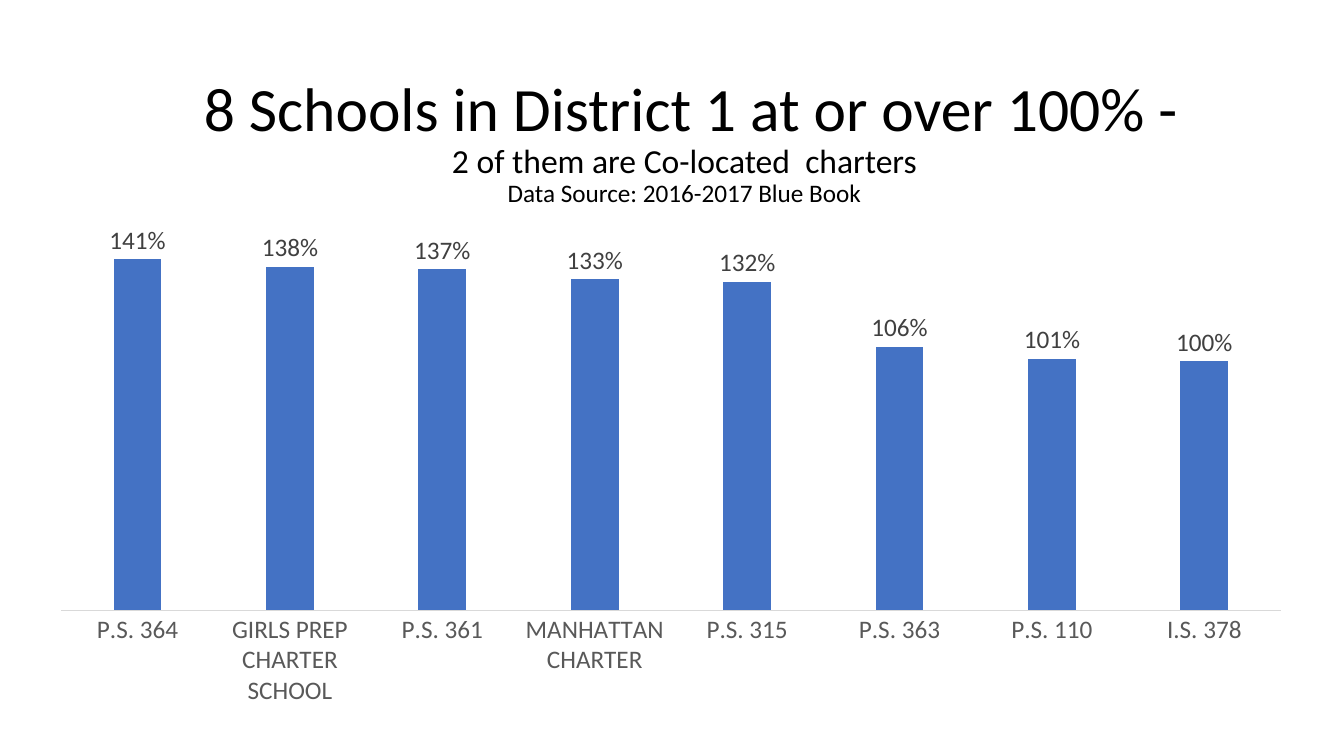
from pptx import Presentation
from pptx.chart.data import CategoryChartData
from pptx.dml.color import RGBColor
from pptx.enum.chart import XL_CHART_TYPE as ChartType, XL_LABEL_POSITION as LabelPos
from pptx.enum.chart import XL_TICK_MARK as Tick
from pptx.enum.text import MSO_ANCHOR as Anchor, MSO_AUTO_SIZE as AutoSize, PP_ALIGN as Align
from pptx.util import Pt

PX = 914400 / 100.8
FONT = "Calibri"
BLACK = RGBColor(0x00, 0x00, 0x00)
BLUE = RGBColor(0x44, 0x72, 0xC4)
LABEL_GRAY = RGBColor(0x40, 0x40, 0x40)
AXIS_GRAY = RGBColor(0x59, 0x59, 0x59)
LINE_GRAY = RGBColor(0xD9, 0xD9, 0xD9)

TITLE_LINES = [
    (" 8 Schools in District 1 at or over 100% -", 44),
    ("2 of them are Co-located  charters", 24),
    ("Data Source: 2016-2017 Blue Book", 18),
]
UTILIZATION = {
    "P.S. 364": 1.41,
    "GIRLS PREP CHARTER SCHOOL": 1.38,
    "P.S. 361": 1.37,
    "MANHATTAN CHARTER": 1.33,
    "P.S. 315": 1.32,
    "P.S. 363": 1.06,
    "P.S. 110": 1.01,
    "I.S. 378": 1,
}


def emu(*lengths):
    """Turn px lengths into EMU."""
    return [round(n * PX) for n in lengths]


def style_font(font, size, color):
    """Set the face, size and colour of a font."""
    font.name = FONT
    font.size = Pt(size)
    font.color.rgb = color


def fill_title(sp, box):
    """Place the title and write its lines, each in its own size."""
    sp.left, sp.top, sp.width, sp.height = emu(*box)
    tf = sp.text_frame
    tf.word_wrap = True
    tf.auto_size = AutoSize.NONE
    tf.vertical_anchor = Anchor.MIDDLE
    p = tf.paragraphs[0]
    p.alignment = Align.CENTER
    p.line_spacing = 0.9
    for i, (text, size) in enumerate(TITLE_LINES):
        if i:
            p.add_line_break()
        r = p.add_run()
        r.text = text
        style_font(r.font, size, BLACK)


def add_utilization_chart(s, box):
    """Draw the column chart of school utilization in the box."""
    data = CategoryChartData(number_format="0%")
    data.categories = list(UTILIZATION)
    data.add_series("Series 1", list(UTILIZATION.values()))
    chart = s.shapes.add_chart(ChartType.COLUMN_CLUSTERED, *emu(*box), data).chart
    chart.has_title = False
    chart.has_legend = False
    style_font(chart.font, 10, BLACK)

    cat_axis = chart.category_axis
    cat_axis.major_tick_mark = cat_axis.minor_tick_mark = Tick.NONE
    cat_axis.format.line.color.rgb = LINE_GRAY
    cat_axis.format.line.width = Pt(0.75)
    style_font(cat_axis.tick_labels.font, 18, AXIS_GRAY)

    val_axis = chart.value_axis
    val_axis.minimum_scale, val_axis.maximum_scale = 0, 1.6
    val_axis.has_major_gridlines = False
    val_axis.visible = False

    plot = chart.plots[0]
    plot.gap_width, plot.overlap = 219, -27
    plot.vary_by_categories = False
    series = plot.series[0]
    series.format.fill.solid()
    series.format.fill.fore_color.rgb = BLUE

    labels = series.data_labels
    labels.show_value = True
    labels.position = LabelPos.OUTSIDE_END
    labels.number_format = "0%"
    labels.number_format_is_linked = False
    style_font(labels.font, 18, LABEL_GRAY)


def main():
    """Build the slide and save it."""
    prs = Presentation()
    prs.slide_width, prs.slide_height = emu(1344, 756)
    s = prs.slides.add_slide(prs.slide_layouts[5])
    fill_title(s.shapes.title, (105, 70, 1159, 146))
    add_utilization_chart(s, (36, 202, 1270, 514))
    prs.save("out.pptx")


if __name__ == "__main__":
    main()
